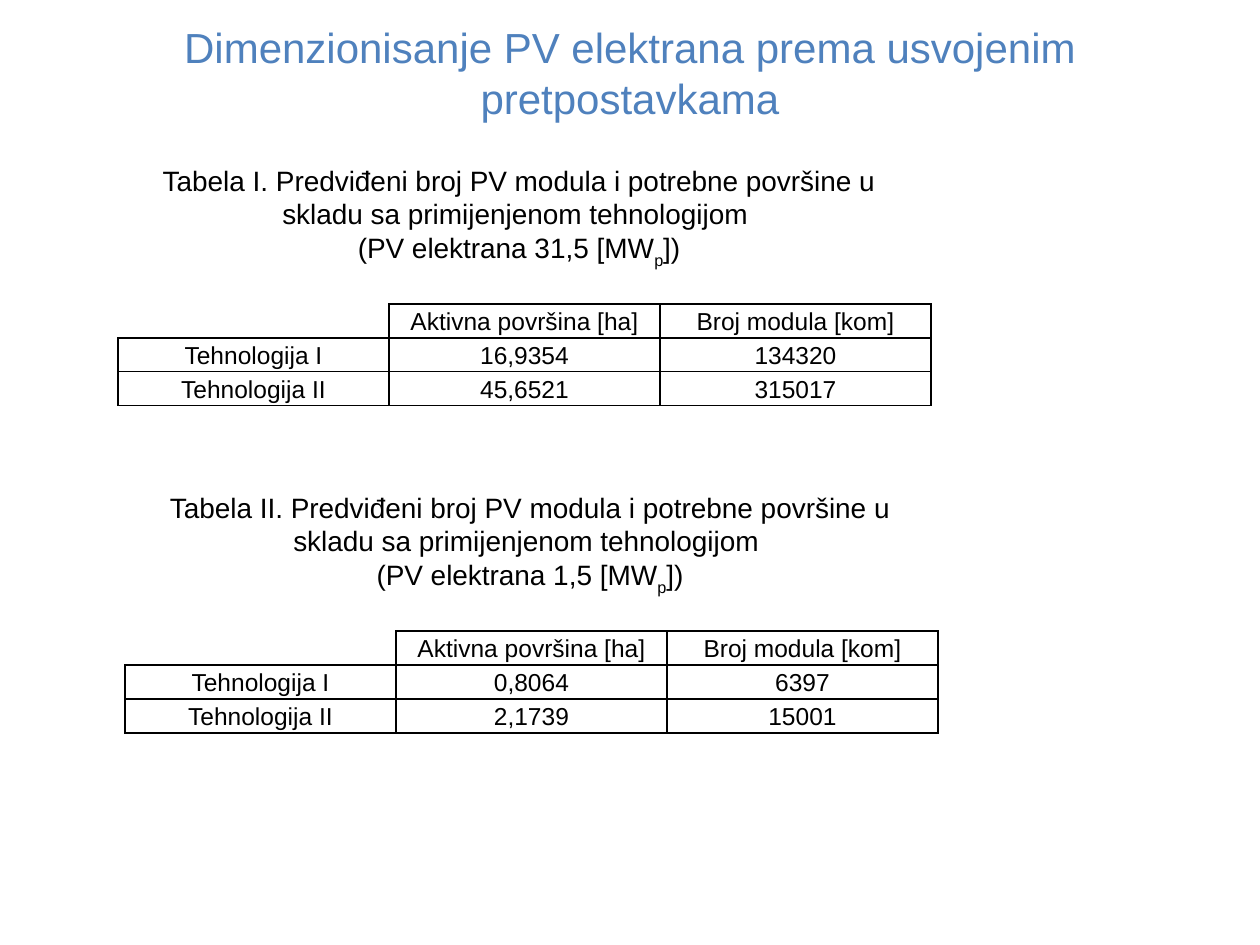
from dataclasses import dataclass

from lxml.etree import SubElement
from pptx import Presentation
from pptx.dml.color import RGBColor
from pptx.enum.text import MSO_ANCHOR, PP_ALIGN
from pptx.oxml.ns import qn
from pptx.slide import Slide
from pptx.table import _Cell
from pptx.text.text import TextFrame, _Paragraph
from pptx.util import Emu, Pt

EMU_PER_PX = 914400 / 126
FONT = "Arial"
COLORS = {"title": "4F81BD", "ink": "000000"}
COLUMN_WIDTH = 271
CELL_MARGIN = 9
CELL_SIZE = 14
HEADER = ("", "Aktivna površina [ha]", "Broj modula [kom]")


@dataclass(frozen=True)
class Box:
    left: int
    top: int
    width: int
    height: int


@dataclass(frozen=True)
class PlantTable:
    numeral: str
    power: str
    caption_box: Box
    left: int
    top: int
    row_height: int
    rows: tuple[tuple[str, str, str], ...]


PLANTS = (
    PlantTable("I", "31,5", Box(107, 159, 824, 115), 118, 304, 32, (
        ("Tehnologija I", "16,9354", "134320"),
        ("Tehnologija II", "45,6521", "315017"),
    )),
    PlantTable("II", "1,5", Box(123, 486, 814, 115), 125, 631, 34, (
        ("Tehnologija I", "0,8064", "6397"),
        ("Tehnologija II", "2,1739", "15001"),
    )),
)


def px(length: int) -> Emu:
    return Emu(round(length * EMU_PER_PX))


def format_paragraph(paragraph: _Paragraph, size: int, color: str) -> None:
    paragraph.alignment = PP_ALIGN.CENTER
    for run in paragraph.runs:
        run.font.size = Pt(size)
        run.font.name = FONT
        run.font.color.rgb = RGBColor.from_string(COLORS[color])


def add_text(slide: Slide, box: Box, text: str) -> TextFrame:
    frame = slide.shapes.add_textbox(
        px(box.left), px(box.top), px(box.width), px(box.height)
    ).text_frame
    frame.word_wrap = True
    frame.vertical_anchor = MSO_ANCHOR.MIDDLE
    frame.text = text
    return frame


def add_caption(slide: Slide, plant: PlantTable) -> None:
    frame = add_text(
        slide,
        plant.caption_box,
        f"Tabela {plant.numeral}. Predviđeni broj PV modula i potrebne površine "
        "u skladu sa primijenjenom tehnologijom ",
    )
    power_line = frame.add_paragraph()
    power_line.text = f"(PV elektrana {plant.power} [MW"
    subscript = power_line.add_run()
    subscript.text = "p"
    subscript.font._element.set("baseline", "-30000")
    power_line.add_run().text = "])"
    for paragraph in frame.paragraphs:
        format_paragraph(paragraph, 16, "ink")


def draw_borders(cell: _Cell, sides: str) -> None:
    properties = cell._tc.get_or_add_tcPr()
    for side in sides:
        border = SubElement(properties, qn(f"a:ln{side}"), w=str(Pt(1)))
        fill = SubElement(border, qn("a:solidFill"))
        SubElement(fill, qn("a:srgbClr"), val=COLORS["ink"])


def fill_cell(cell: _Cell, text: str) -> None:
    cell.margin_left = cell.margin_right = px(CELL_MARGIN)
    cell.margin_top = cell.margin_bottom = 0
    draw_borders(cell, "LRTB" if text else "RB")
    cell.fill.background()
    cell.text_frame.text = text
    paragraph = cell.text_frame.paragraphs[0]
    paragraph.line_spacing = 1.15
    format_paragraph(paragraph, CELL_SIZE, "ink")
    if not text:
        SubElement(paragraph._p, qn("a:endParaRPr"), sz=str(CELL_SIZE * 100))


def add_plant_table(slide: Slide, plant: PlantTable) -> None:
    rows = (HEADER, *plant.rows)
    table = slide.shapes.add_table(
        len(rows), len(HEADER), px(plant.left), px(plant.top),
        px(COLUMN_WIDTH * len(HEADER)), px(plant.row_height * len(rows)),
    ).table
    table.first_row = False
    table.horz_banding = False
    for column in table.columns:
        column.width = px(COLUMN_WIDTH)
    for row_index, values in enumerate(rows):
        table.rows[row_index].height = px(plant.row_height)
        for column_index, value in enumerate(values):
            fill_cell(table.cell(row_index, column_index), value)


def main() -> None:
    presentation = Presentation()
    presentation.slide_width = px(1260)
    presentation.slide_height = px(945)
    slide = presentation.slides.add_slide(presentation.slide_layouts[6])
    title = add_text(
        slide,
        Box(63, 38, 1134, 68),
        "Dimenzionisanje PV elektrana prema usvojenim pretpostavkama",
    )
    format_paragraph(title.paragraphs[0], 24, "title")
    for plant in PLANTS:
        add_plant_table(slide, plant)
        add_caption(slide, plant)
    presentation.save("out.pptx")


if __name__ == "__main__":
    main()
